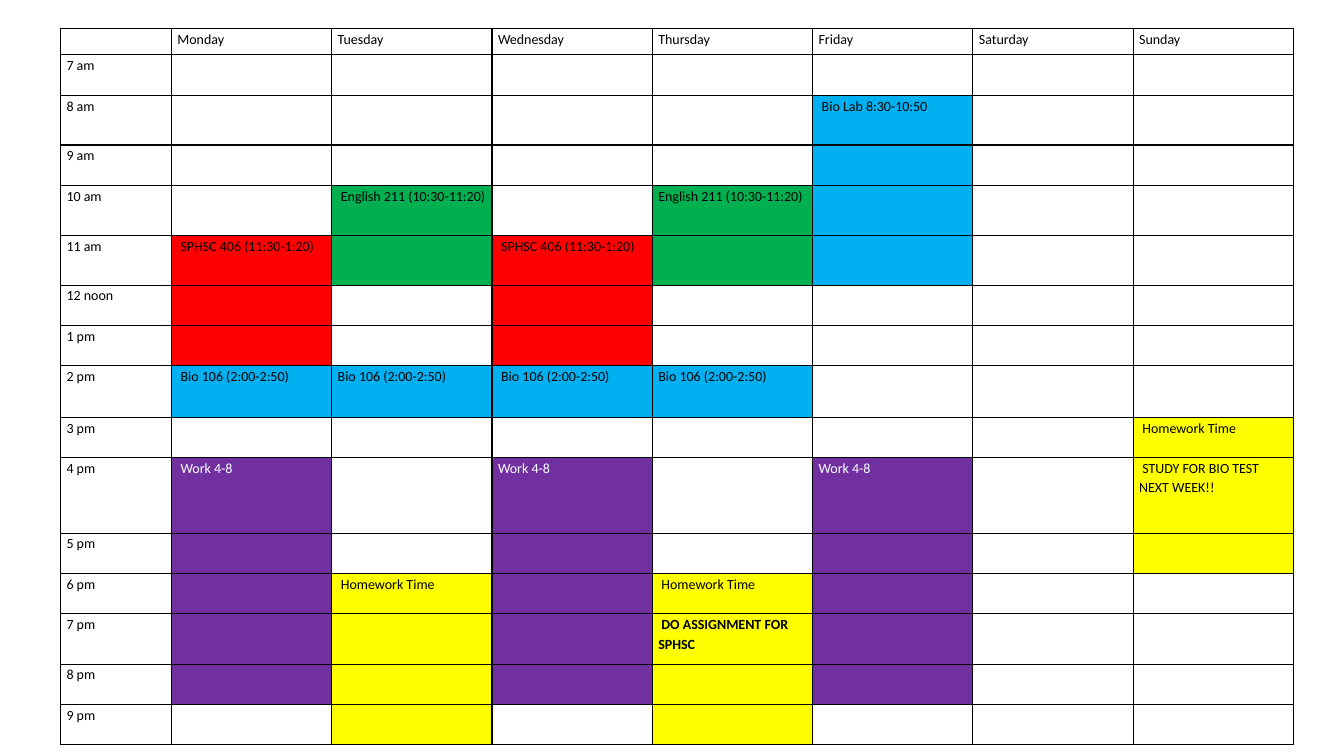
"""Build a one-slide weekly class, work and study timetable."""
from lxml.etree import SubElement
from pptx import Presentation
from pptx.dml.color import RGBColor
from pptx.oxml.ns import qn
from pptx.util import Inches, Pt

COLORS = {"blank": "FFFFFF", "ink": "000000", "lab": "00B0F0", "english": "00B050",
          "speech": "FF0000", "work": "7030A0", "homework": "FFFF00"}
DAYS = ["Monday", "Tuesday", "Wednesday", "Thursday", "Friday", "Saturday", "Sunday"]
HOURS = ["7 am", "8 am", "9 am", "10 am", "11 am", "12 noon", "1 pm", "2 pm",
         "3 pm", "4 pm", "5 pm", "6 pm", "7 pm", "8 pm", "9 pm"]
ROW_HEIGHTS = [0.26, 0.41, 0.49, 0.4, 0.5, 0.49, 0.4, 0.4, 0.51,
               0.4, 0.75, 0.4, 0.4, 0.5, 0.4, 0.4]
HOUR_WIDTH, DAY_WIDTH = 1.1, 1.59

EVENTS = [
    ("Monday", "11 am", "speech", [" SPHSC 406 (11:30-1:20)", "", ""]),
    ("Monday", "2 pm", "lab", [" Bio 106 (2:00-2:50)"]),
    ("Monday", "4 pm", "work", [" Work 4-8", "", "", "", ""]),
    ("Tuesday", "10 am", "english", [" English 211 (10:30-11:20)", ""]),
    ("Tuesday", "2 pm", "lab", ["Bio 106 (2:00-2:50)"]),
    ("Tuesday", "6 pm", "homework", [" Homework Time", "", "", ""]),
    ("Wednesday", "11 am", "speech", [" SPHSC 406 (11:30-1:20)", "", ""]),
    ("Wednesday", "2 pm", "lab", [" Bio 106 (2:00-2:50)"]),
    ("Wednesday", "4 pm", "work", ["Work 4-8", "", "", "", ""]),
    ("Thursday", "10 am", "english", ["English 211 (10:30-11:20)", ""]),
    ("Thursday", "2 pm", "lab", ["Bio 106 (2:00-2:50)"]),
    ("Thursday", "6 pm", "homework",
     [" Homework Time", " DO ASSIGNMENT FOR SPHSC ", "", ""]),
    ("Friday", "8 am", "lab", [" Bio Lab 8:30-10:50", "", "", ""]),
    ("Friday", "4 pm", "work", ["Work 4-8 ", "", "", "", ""]),
    ("Sunday", "3 pm", "homework",
     [" Homework Time ", " STUDY FOR BIO TEST NEXT WEEK!! ", ""]),
]


def style_cell(cell, text, kind):
    """Write one timetable cell with its fill, borders and font."""
    cell.margin_left = cell.margin_right = Inches(0.06)
    cell.margin_top = cell.margin_bottom = 0
    properties = cell._tc.get_or_add_tcPr()
    for side in ("lnL", "lnR", "lnT", "lnB"):
        border = SubElement(properties, qn(f"a:{side}"), w=str(Pt(1)))
        line_fill = SubElement(border, qn("a:solidFill"))
        SubElement(line_fill, qn("a:srgbClr"), val=COLORS["ink"])
    cell.fill.solid()
    cell.fill.fore_color.rgb = RGBColor.from_string(COLORS[kind])
    para = cell.text_frame.paragraphs[0]
    para.text = text
    para.line_spacing = 1.15
    for span in para.runs:
        span.font.name = "Calibri"
        span.font.size = Pt(10)
        span.font.bold = "ASSIGNMENT" in text
        ink = "blank" if kind == "work" else "ink"
        span.font.color.rgb = RGBColor.from_string(COLORS[ink])
    if not text:
        SubElement(para._p, qn("a:endParaRPr"), sz="1000")


deck = Presentation()
deck.slide_width, deck.slide_height = Inches(13.33), Inches(7.5)
page = deck.slides.add_slide(deck.slide_layouts[6])

schedule = {(0, column): (day, "blank") for column, day in enumerate(DAYS, 1)}
schedule.update({(row, 0): (hour, "blank") for row, hour in enumerate(HOURS, 1)})
for day, start, kind, entries in EVENTS:
    for row, entry in enumerate(entries, HOURS.index(start) + 1):
        schedule[row, DAYS.index(day) + 1] = (entry, kind)

frame = page.shapes.add_table(
    len(HOURS) + 1, len(DAYS) + 1, Inches(0.6), Inches(0.28),
    Inches(HOUR_WIDTH + DAY_WIDTH * len(DAYS)), Inches(sum(ROW_HEIGHTS)))
timetable = frame.table
timetable.first_row = timetable.horz_banding = False
for index, column in enumerate(timetable.columns):
    column.width = Inches(DAY_WIDTH if index else HOUR_WIDTH)
for row, height in enumerate(ROW_HEIGHTS):
    timetable.rows[row].height = Inches(height)
    for column in range(len(DAYS) + 1):
        text, kind = schedule.get((row, column), ("", "blank"))
        style_cell(timetable.cell(row, column), text, kind)

deck.save("out.pptx")
